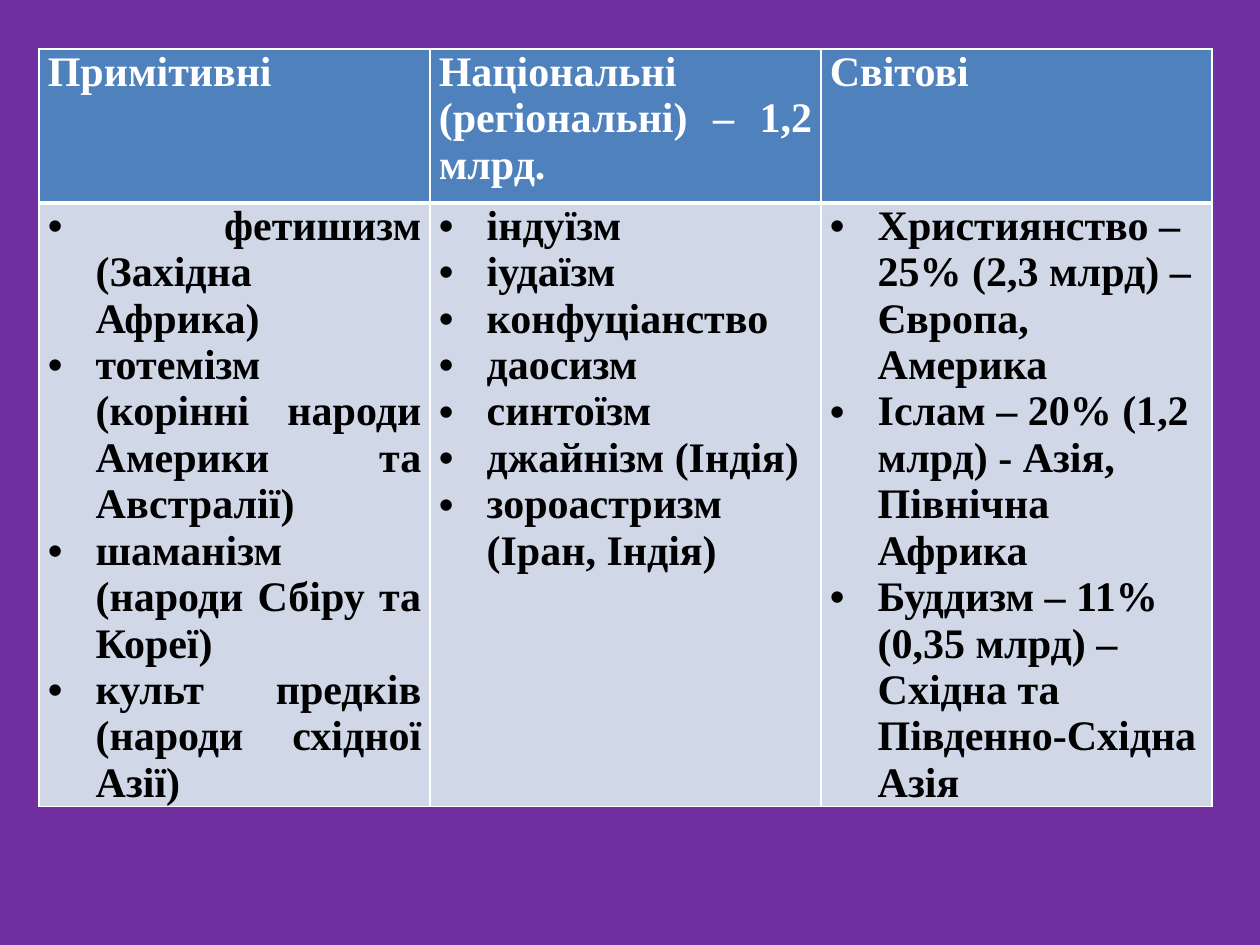
"""Build a slide with a table of three groups of religions."""
from dataclasses import dataclass

from lxml import etree
from pptx import Presentation
from pptx.dml.color import RGBColor
from pptx.enum.text import PP_ALIGN
from pptx.oxml.ns import qn
from pptx.util import Inches, Pt

JUSTIFY, LEFT = PP_ALIGN.JUSTIFY, PP_ALIGN.LEFT
PURPLE = RGBColor(0x70, 0x30, 0xA0)
BLUE = RGBColor(0x4F, 0x81, 0xBD)
PALE = RGBColor(0xD0, 0xD8, 0xE8)
WHITE = RGBColor(0xFF, 0xFF, 0xFF)
BLACK = RGBColor(0x00, 0x00, 0x00)
FONT, SIZE = "Times New Roman", Pt(24)
WIDTH, HEIGHT = Inches(10), Inches(7.5)
ROW_HEIGHTS = (Inches(1.22), Inches(4.79))
INDENT = Inches(0.38)
THIN, THICK = Pt(1), Pt(3)


@dataclass(frozen=True)
class Group:
    title: str
    items: tuple[str, ...]
    align: PP_ALIGN = JUSTIFY


GROUPS = (
    Group("Примітивні", (
        " фетишизм (Західна Африка)",
        "тотемізм (корінні народи Америки та Австралії)",
        "шаманізм (народи Сбіру та Кореї)",
        "культ предків (народи східної Азії)",
    )),
    Group("Національні (регіональні) – 1,2 млрд.", (
        "індуїзм", "іудаїзм", "конфуціанство", "даосизм", "синтоїзм",
        "джайнізм (Індія)", "зороастризм (Іран, Індія)",
    )),
    Group("Світові", (
        "Християнство – 25% (2,3 млрд) – Європа, Америка",
        "Іслам – 20% (1,2 млрд) - Азія, Північна Африка",
        "Буддизм – 11% (0,35 млрд) – Східна та Південно-Східна Азія",
    ), LEFT),
)


def add_borders(cell, top: int, bottom: int) -> None:
    """Draw white lines on all four sides of a cell."""
    tc_pr = cell._tc.get_or_add_tcPr()
    for side, width in (("L", THIN), ("R", THIN), ("T", top), ("B", bottom)):
        ln = etree.SubElement(tc_pr, qn(f"a:ln{side}"), w=str(width))
        fill = etree.SubElement(ln, qn("a:solidFill"))
        etree.SubElement(fill, qn("a:srgbClr"), val=str(WHITE))


def add_bullet(p) -> None:
    """Give a paragraph a round bullet with a hanging indent."""
    p_pr = p._p.get_or_add_pPr()
    p_pr.set("marL", str(INDENT))
    p_pr.set("indent", str(-INDENT))
    etree.SubElement(p_pr, qn("a:buFont"), typeface="Arial")
    etree.SubElement(p_pr, qn("a:buChar"), char="•")


def fill_cell(cell, lines: tuple[str, ...], align: PP_ALIGN, fill: RGBColor,
              color: RGBColor, bulleted: bool) -> None:
    """Write and format the paragraphs of a cell."""
    cell.margin_left = cell.margin_right = Inches(0.07)
    cell.margin_top = cell.margin_bottom = 0
    cell.fill.solid()
    cell.fill.fore_color.rgb = fill
    tf = cell.text_frame
    tf.text = "\n".join(lines)
    for p in tf.paragraphs:
        p.alignment = align
        if bulleted:
            add_bullet(p)
        font = p.runs[0].font
        font.name, font.size, font.bold = FONT, SIZE, True
        font.color.rgb = color


def main() -> None:
    """Create the presentation and save it."""
    prs = Presentation()
    prs.slide_width, prs.slide_height = WIDTH, HEIGHT
    s = prs.slides.add_slide(prs.slide_layouts[6])
    s.background.fill.solid()
    s.background.fill.fore_color.rgb = PURPLE

    table = s.shapes.add_table(
        len(ROW_HEIGHTS), len(GROUPS), Inches(0.31), Inches(0.39),
        Inches(9.31), sum(ROW_HEIGHTS)).table
    for row, height in zip(table.rows, ROW_HEIGHTS):
        row.height = height
    for col, group in enumerate(GROUPS):
        head, body = table.cell(0, col), table.cell(1, col)
        add_borders(head, THIN, THICK)
        add_borders(body, THICK, THIN)
        fill_cell(head, (group.title,), JUSTIFY, BLUE, WHITE, False)
        fill_cell(body, group.items, group.align, PALE, BLACK, True)
    prs.save("out.pptx")


if __name__ == "__main__":
    main()
